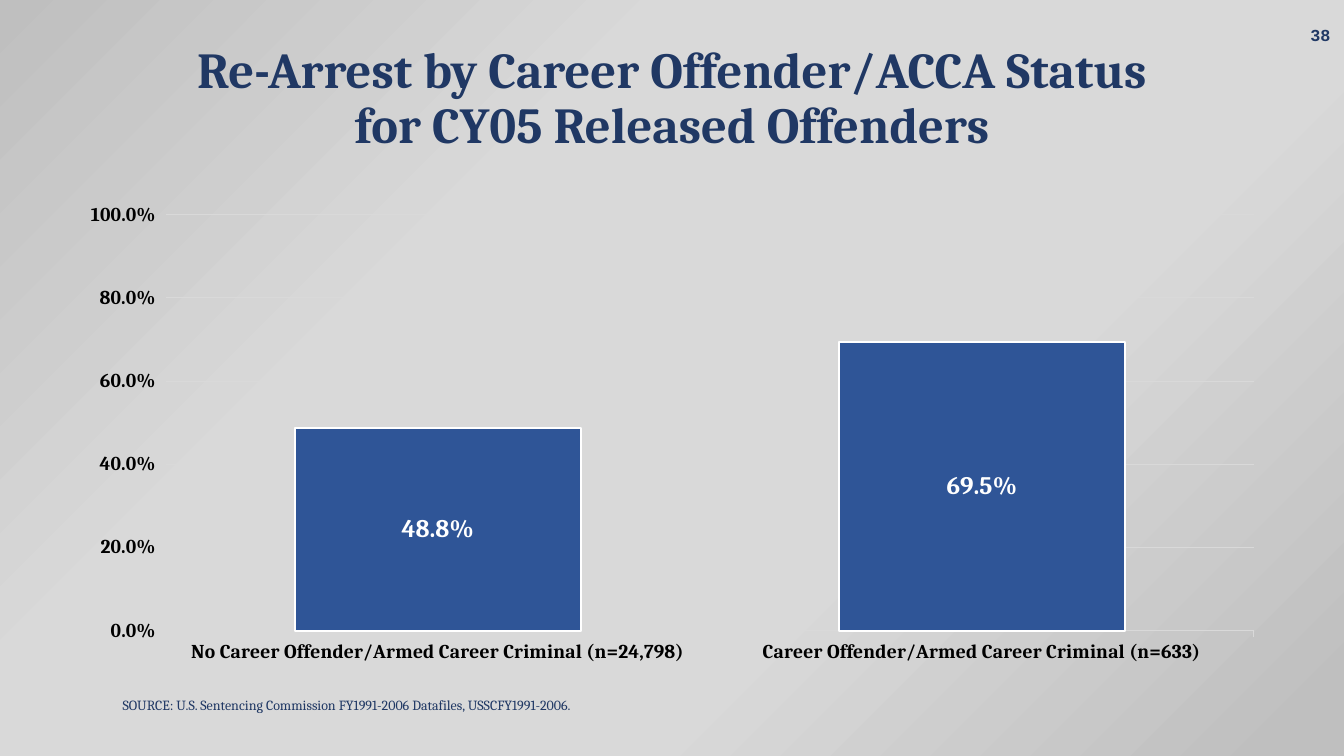
import pptx
import pptx.chart.data
import pptx.dml.color
import pptx.enum.chart
import pptx.enum.text
import pptx.oxml
import pptx.oxml.ns
import pptx.util
from pptx.util import Cm

COLORS = {
    "navy": "203864",
    "bar": "2F5597",
    "white": "FFFFFF",
    "black": "000000",
    "grid": "D9D9D9",
    "edge": "BFBFBF",
}
SERIF = "Cambria"
ALIGN = pptx.enum.text.PP_ALIGN
ANCHOR = pptx.enum.text.MSO_ANCHOR
PERCENT = "0.0%"


def color(name):
    return pptx.dml.color.RGBColor.from_string(COLORS[name])


def style_font(font, size, shade, bold=False, family=SERIF):
    font.name = family
    font.size = pptx.util.Pt(size)
    font.bold = bold
    font.color.rgb = color(shade)


def style_line(line, shade, width):
    line.color.rgb = color(shade)
    line.width = pptx.util.Pt(width)


def paint_background(page):
    fill = page.background.fill
    fill.gradient()
    fill.gradient_angle = 315
    stops = page.background._cSld.find(".//" + pptx.oxml.ns.qn("a:gsLst"))
    for stop in list(stops):
        stops.remove(stop)
    for percent, shade in ((0, "edge"), (33, "grid"), (66, "grid"), (97, "edge")):
        stops.append(pptx.oxml.parse_xml(
            f'<a:gs {pptx.oxml.ns.nsdecls("a")} pos="{percent * 1000}">'
            f'<a:srgbClr val="{COLORS[shade]}"/></a:gs>'))


def add_text(page, box, text, size, align=ALIGN.LEFT, anchor=ANCHOR.TOP,
             bold=False, family=SERIF, spacing=0.9):
    frame = page.shapes.add_textbox(*box).text_frame
    frame.word_wrap = True
    frame.vertical_anchor = anchor
    paragraph = frame.paragraphs[0]
    paragraph.text = text
    paragraph.alignment = align
    paragraph.line_spacing = spacing
    style_font(paragraph.font, size, "navy", bold, family)


def add_page_number(page, box):
    add_text(page, box, "38", 12, ALIGN.RIGHT, ANCHOR.MIDDLE, True, "Courier New", 1.0)


def add_title(page, box):
    add_text(page, box,
             "Re-Arrest by Career Offender/ACCA Status\vfor CY05 Released Offenders",
             36, ALIGN.CENTER, bold=True)


def add_source(page, box):
    add_text(page, box,
             "SOURCE: U.S. Sentencing Commission FY1991-2006 Datafiles, USSCFY1991-2006.", 10)


def style_axes(chart):
    category_axis, value_axis = chart.category_axis, chart.value_axis
    for axis in (category_axis, value_axis):
        axis.major_tick_mark = pptx.enum.chart.XL_TICK_MARK.OUTSIDE
        style_font(axis.tick_labels.font, 14, "black", True)
    style_line(category_axis.format.line, "grid", 0.75)
    value_axis.format.line.fill.background()
    value_axis.minimum_scale = 0
    value_axis.maximum_scale = 1
    value_axis.major_unit = 0.2
    value_axis.tick_labels.number_format = PERCENT
    value_axis.tick_labels.number_format_is_linked = False
    style_line(value_axis.major_gridlines.format.line, "grid", 0.75)


def style_bars(plot):
    plot.gap_width = 90
    plot.vary_by_categories = False
    bars = plot.series[0]
    bars.format.fill.solid()
    bars.format.fill.fore_color.rgb = color("bar")
    style_line(bars.format.line, "white", 1.5)
    labels = bars.data_labels
    labels.show_value = True
    labels.position = pptx.enum.chart.XL_LABEL_POSITION.CENTER
    labels.number_format = PERCENT
    labels.number_format_is_linked = False
    style_font(labels.font, 18, "white", True)


def add_rearrest_chart(page, box):
    data = pptx.chart.data.CategoryChartData(number_format=PERCENT)
    data.categories = [
        "No Career Offender/Armed Career Criminal (n=24,798)",
        "Career Offender/Armed Career Criminal (n=633)",
    ]
    data.add_series("Series 1", (0.488, 0.695))
    chart = page.shapes.add_chart(
        pptx.enum.chart.XL_CHART_TYPE.COLUMN_CLUSTERED, *box, data).chart
    chart.has_legend = False
    chart.has_title = False
    style_font(chart.font, 10, "black")
    style_axes(chart)
    style_bars(chart.plots[0])


def main():
    deck = pptx.Presentation()
    deck.slide_width = Cm(33.87)
    deck.slide_height = Cm(19.05)
    page = deck.slides.add_slide(deck.slide_layouts[6])
    paint_background(page)
    add_page_number(page, (Cm(26.16), Cm(0.38), Cm(7.62), Cm(1.02)))
    add_rearrest_chart(page, (Cm(1.68), Cm(4.88), Cm(30.53), Cm(12.09)))
    add_title(page, (Cm(0), Cm(1.02), deck.slide_width, Cm(3.35)))
    add_source(page, (Cm(2.84), Cm(17.48), Cm(28.19), Cm(1.5)))
    deck.save("out.pptx")


if __name__ == "__main__":
    main()
